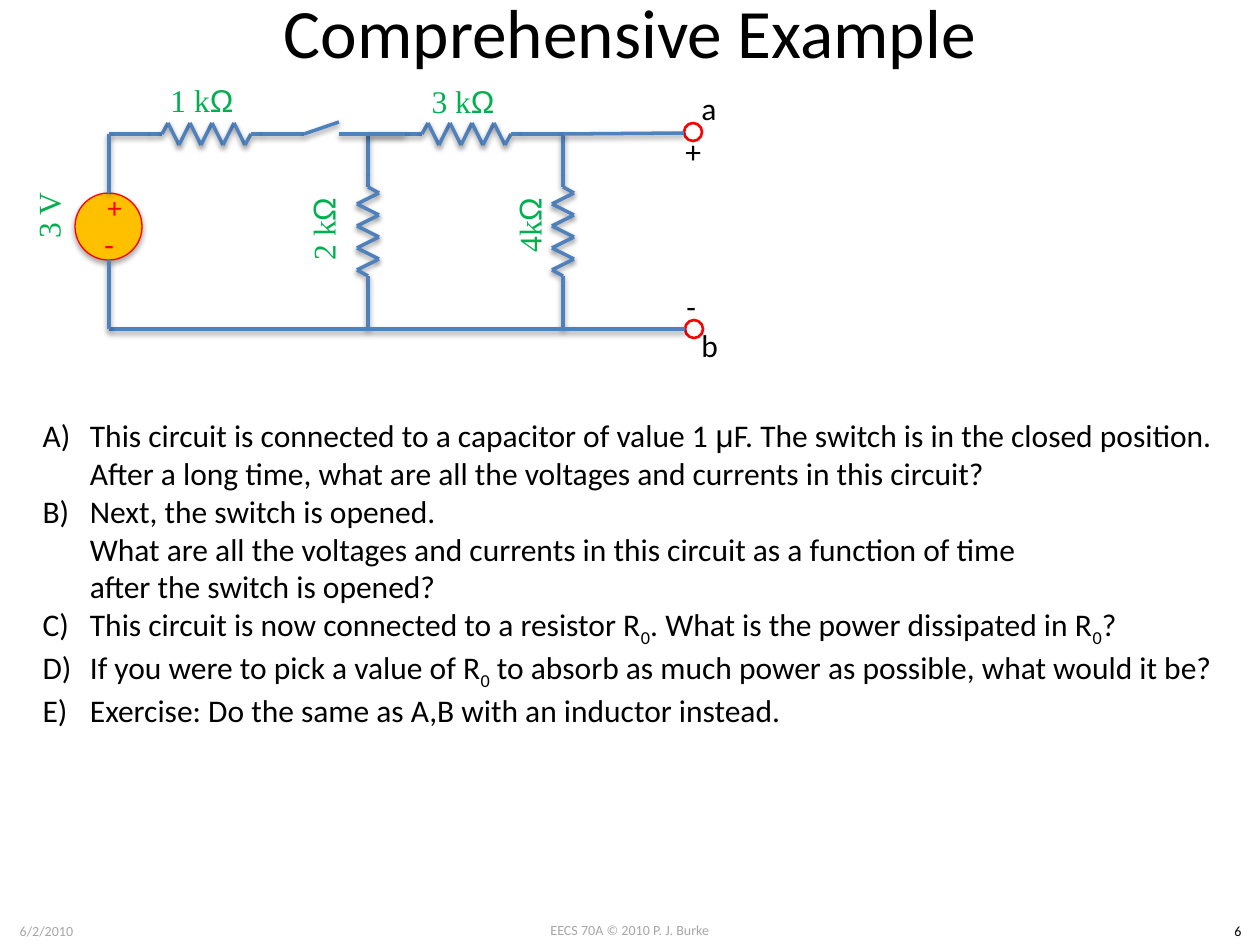
from itertools import pairwise
from lxml.etree import SubElement as Sub
from pptx import Presentation
from pptx.dml.color import RGBColor as Rgb
from pptx.enum.shapes import MSO_CONNECTOR as Link, MSO_SHAPE as Form
from pptx.enum.text import MSO_ANCHOR as Anchor, MSO_AUTO_SIZE as Fit, PP_ALIGN as Align
from pptx.oxml.ns import qn
from pptx.util import Emu, Pt

INK = {"wire": "4F81BD", "value": "00B050", "red": "FF0000", "gold": "FFC000",
       "gray": "A6A6A6", "black": "000000"}
GREEK = "Ωμ"
TASKS = [
    ["This circuit is connected to a capacitor of value 1 ", "μ",
     "F. The switch is in the closed position.", "\v",
     "After a long time, what are all the voltages and currents in this circuit?"],
    ["Next, the switch is opened. ", "\v",
     "What are all the voltages and currents in this circuit as a function of time ", "\v",
     "after the switch is opened?"],
    ["This circuit is now connected to a resistor R", "0",
     ". What is the power dissipated in R", "0", "?"],
    ["If you were to pick a value of R", "0",
     " to absorb as much power as possible, what would it be?"],
    ["Exercise: Do the same as A,B with an inductor instead."],
]


def px(num):
    """Turn px into EMU."""
    return Emu(round(num * 914400 / 126))


def color(name):
    """Look up a named colour."""
    return Rgb.from_string(INK[name])


def style(run, size, ink, face="Calibri"):
    """Format one run."""
    font = run.font
    font.size, font.name = Pt(size), face
    font.color.rgb = color(ink)


def write(par, bits, size, ink, face="Calibri"):
    """Fill a paragraph with runs, line breaks and subscripts."""
    for bit in bits:
        if bit == "\v":
            par.add_line_break()
            continue
        run = par.add_run()
        run.text = bit
        style(run, size, ink, "Arial" if bit in GREEK else face)
        if bit == "0":
            run.font._element.set("baseline", "-25000")
    for gap in par._p.findall(qn("a:br")):
        Sub(gap, qn("a:rPr"), sz=str(size * 100))


def place(shape, box):
    """Move a shape to a px box."""
    shape.left, shape.top, shape.width, shape.height = map(px, box)


def label(home, box, bits, size, ink, face="Calibri", mid=True, turn=0):
    """Add a text box that does not wrap."""
    shape = home.add_textbox(*map(px, box))
    shape.rotation = turn
    frame = shape.text_frame
    frame.word_wrap = False
    par = frame.paragraphs[0]
    if mid:
        frame.vertical_anchor = Anchor.MIDDLE
        par.alignment = Align.CENTER
    write(par, bits, size, ink, face)
    return shape


def shade(shape, dist, alpha):
    """Give a shape a soft shadow straight below."""
    glow = Sub(Sub(shape._element.spPr, qn("a:effectLst")), qn("a:outerShdw"),
               blurRad="40000", dist=str(dist), dir="5400000", rotWithShape="0")
    tone = Sub(glow, qn("a:srgbClr"), val=INK["black"])
    Sub(tone, qn("a:alpha"), val=str(alpha))


def wire(home, start, end):
    """Draw one straight wire."""
    line = home.add_connector(Link.STRAIGHT, *map(px, (*start, *end)))
    line.line.color.rgb = color("wire")
    line.line.width = Pt(2)
    shade(line, 20000, 38000)


def ring(home, x, y, size, width):
    """Draw a red circle without fill."""
    disc = home.add_shape(Form.OVAL, *map(px, (x, y, size, size)))
    disc.fill.background()
    disc.line.color.rgb = color("red")
    disc.line.width = Pt(width)
    return disc


def coil(slide, x, y, down=False):
    """Draw a resistor 195 px long, to the right or down."""
    home = slide.shapes.add_group_shape().shapes
    teeth = [(59 + 11 * i, 11 if i % 2 else -11) for i in range(8)]
    path = [(0, 0), (42, 0), (53, 0), *teeth, (142, 0), (153, 0), (195, 0)]
    spots = [(x - v, y + u) if down else (x + u, y + v) for u, v in path]
    for start, end in pairwise(spots):
        wire(home, start, end)


def source(slide, x, y):
    """Draw the voltage source below the node at x, y."""
    home = slide.shapes.add_group_shape().shapes
    disc = ring(home, x - 34, y + 59, 67, 0.75)
    disc.fill.solid()
    disc.fill.fore_color.rgb = color("gold")
    shade(disc, 23000, 35000)
    for sign, dx, dy, size in (("+", -14, 52, 16.6), ("-", -17, 89, 18)):
        label(home, (x + dx, y + dy, 33, 42), [sign], size, "red")
    wire(home, (x, y + 195), (x, y + 126))
    wire(home, (x, y + 59), (x, y))


def circuit(slide, x, y):
    """Draw the whole circuit from its top left node."""
    home = slide.shapes
    for dx, down in ((259, True), (260, False), (454, True), (0, False)):
        coil(slide, x + dx, y, down)
    for dx, dy in ((575, -11), (576, 186)):
        ring(home, x + dx, y + dy, 18, 1.5).shadow.inherit = False
    for name, dx, dy in (("a", 580, -51), ("b", 580, 186), ("+", 564, -8), ("-", 565, 147)):
        label(home, (x + dx, y + dy, 40, 50), [name], 18, "black", mid=False)
    for a, b, c, d in ((454, 0, 575, -1), (0, 195, 576, 195),
                       (230, 0, 296, 0), (195, 0, 230, -12)):
        wire(home, (x + a, y + b), (x + c, y + d))
    source(slide, x, y)
    for bits, dx, dy, turn in ((["1 k", "Ω"], 93, -34, 0), (["3 k", "Ω"], 354, -33, 0),
                               (["2 k", "Ω"], 214, 95, 270), (["4k", "Ω"], 420, 91, 270),
                               (["3 V"], -61, 82, 270)):
        label(home, (x + dx - 75, y + dy - 46, 150, 92), bits, 18, "value",
              "Times New Roman", turn=turn)


def title(slide, box):
    """Set the slide title."""
    shape = slide.shapes.title
    place(shape, box)
    frame = shape.text_frame
    frame.text = "Comprehensive Example"
    frame.vertical_anchor = Anchor.MIDDLE
    frame.paragraphs[0].alignment = Align.CENTER
    style(frame.paragraphs[0].runs[0], 39.6, "black")


def tasks(slide, box):
    """Set the lettered list of questions."""
    shape = slide.placeholders[1]
    place(shape, box)
    frame = shape.text_frame
    frame.word_wrap, frame.auto_size = True, Fit.NONE
    for i, bits in enumerate(TASKS):
        par = frame.add_paragraph() if i else frame.paragraphs[0]
        par.space_before = Pt(0)
        write(par, bits, 18, "black")
        props = par._p.get_or_add_pPr()
        props.set("marL", "342900")
        props.set("indent", "-342900")
        Sub(props, qn("a:buFont"), typeface="+mj-lt")
        Sub(props, qn("a:buAutoNum"), type="alphaUcParenR")


def footer(slide, y):
    """Add date, course and page number at the bottom."""
    for words, x, dy, wide, ink in (("EECS 70A © 2010 P. J. Burke", 483, 0, 294, "gray"),
                                    ("6/2/2010", 0, 1, 93, "gray"), ("6", 1216, 1, 44, "black")):
        label(slide.shapes, (x, y + dy, wide, 30), [words], 8, ink)


def main():
    """Build and save the slide."""
    deck = Presentation()
    deck.slide_width, deck.slide_height = px(1260), px(945)
    slide = deck.slides.add_slide(deck.slide_layouts[1])
    footer(slide, 915)
    title(slide, (63, -21, 1134, 103))
    circuit(slide, 109, 134)
    tasks(slide, (30, 410, 1211, 432))
    deck.save("out.pptx")


if __name__ == "__main__":
    main()
